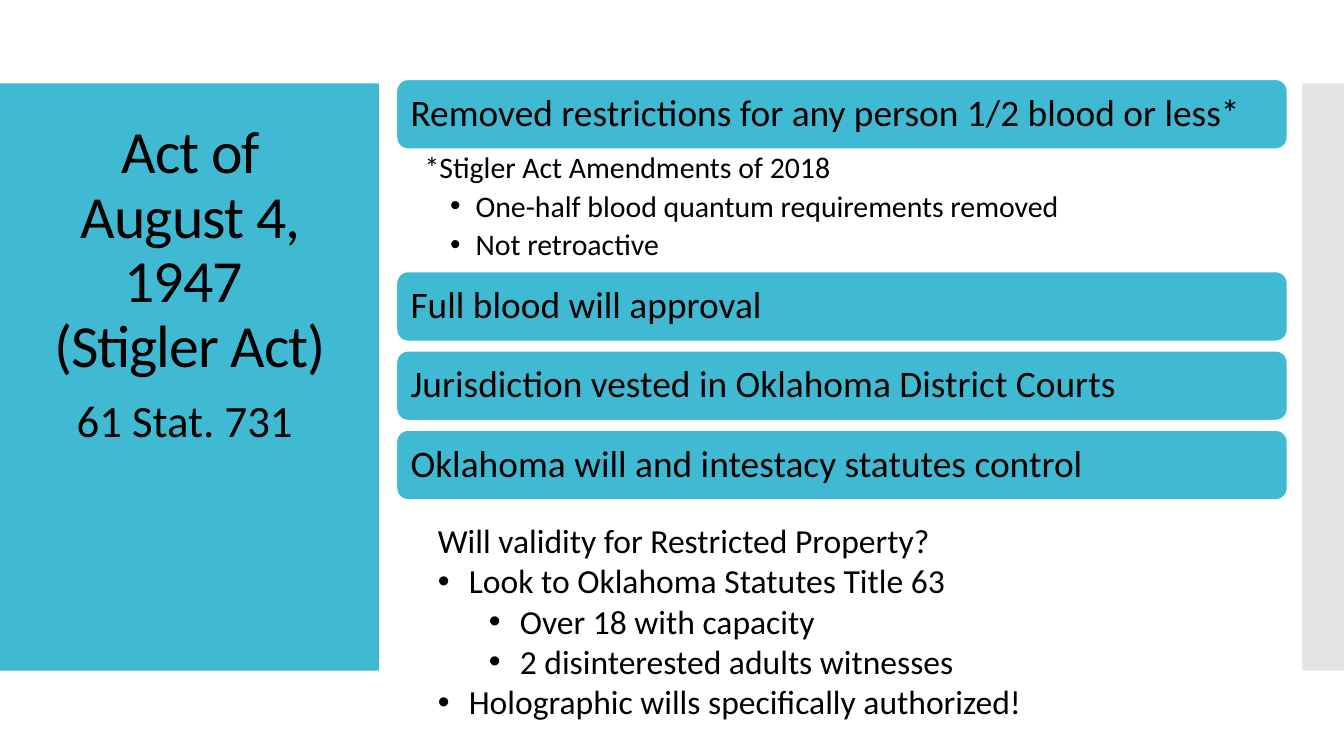
from dataclasses import dataclass

import pptx
import pptx.dml.color
import pptx.enum.shapes
import pptx.enum.text
import pptx.oxml.ns
import pptx.util
from lxml import etree

Inches = pptx.util.Inches
Pt = pptx.util.Pt
qn = pptx.oxml.ns.qn
Align = pptx.enum.text.PP_ALIGN
Anchor = pptx.enum.text.MSO_ANCHOR
Preset = pptx.enum.shapes.MSO_SHAPE


@dataclass(frozen=True)
class Theme:
    font: str = "Calibri"
    text: str = "000000"
    accent: str = "40BAD2"
    edge: str = "C8C8C8"
    outline: str = "FFFFFF"
    title: int = 32
    citation: int = 24
    bar: int = 20
    question: int = 18
    note: int = 16


@dataclass(frozen=True)
class Box:
    left: float
    top: float
    width: float
    height: float

    def lengths(self) -> tuple:
        return tuple(Inches(v) for v in (self.left, self.top, self.width, self.height))


@dataclass(frozen=True)
class Line:
    text: str
    level: int = 0
    indent: float = 0
    hanging: float = 0
    bullet: bool = False


THEME = Theme()
SLIDE_WIDTH = 10
SLIDE_HEIGHT = SLIDE_WIDTH * 9 / 16
BAR_LEFT, BAR_WIDTH, BAR_HEIGHT, BAR_PITCH = 2.95, 6.63, 0.52, 0.59
FIRST_BAR_TOP, LATER_BARS_TOP = 0.59, 2.02

MAIN_POINT = "Removed restrictions for any person 1/2 blood or less*"
LATER_POINTS = (
    "Full blood will approval",
    "Jurisdiction vested in Oklahoma District Courts",
    "Oklahoma will and intestacy statutes control",
)
AMENDMENTS = (
    Line("*Stigler Act Amendments of 2018", 1, 0.19, 0.19),
    Line("One-half blood quantum requirements removed", 2, 0.38, 0.19, True),
    Line("Not retroactive", 2, 0.38, 0.19, True),
)
WILL_VALIDITY = (
    Line("Will validity for Restricted Property?"),
    Line("Look to Oklahoma Statutes Title 63", 0, 0.23, 0.23, True),
    Line("Over 18 with capacity", 1, 0.61, 0.23, True),
    Line("2 disinterested adults witnesses", 1, 0.61, 0.23, True),
    Line("Holographic wills specifically authorized!", 0, 0.23, 0.23, True),
)


def rgb(colour: str) -> pptx.dml.color.RGBColor:
    return pptx.dml.color.RGBColor.from_string(colour)


def add_run(paragraph, text: str, size: int):
    run = paragraph.add_run()
    run.text = text
    run.font.name = THEME.font
    run.font.size = Pt(size)
    run.font.color.rgb = rgb(THEME.text)
    return run


def set_frame(frame, anchor, insets=(0.1, 0.05, 0.1, 0.05)) -> None:
    """Wrap and anchor the text; insets run left, top, right, bottom."""
    frame.word_wrap = True
    frame.auto_size = pptx.enum.text.MSO_AUTO_SIZE.NONE
    frame.vertical_anchor = anchor
    (frame.margin_left, frame.margin_top,
     frame.margin_right, frame.margin_bottom) = map(Inches, insets)


def set_indent(paragraph, line: Line) -> None:
    """Set level, hanging indent and bullet of a paragraph."""
    paragraph.level = line.level
    properties = paragraph._p.get_or_add_pPr()
    properties.set("marL", str(Inches(line.indent)))
    properties.set("indent", str(-Inches(line.hanging)))
    if line.bullet:
        etree.SubElement(properties, qn("a:buFont"), typeface="Arial")
        etree.SubElement(properties, qn("a:buChar"), char="•")
    else:
        etree.SubElement(properties, qn("a:buNone"))


def add_lines(slide, box: Box, lines: tuple[Line, ...], size: int, insets,
              spacing: float = 1, after: float = 0) -> None:
    frame = slide.shapes.add_textbox(*box.lengths()).text_frame
    set_frame(frame, Anchor.TOP, insets)
    for number, line in enumerate(lines):
        paragraph = frame.add_paragraph() if number else frame.paragraphs[0]
        paragraph.line_spacing = spacing
        paragraph.space_after = Pt(after)
        set_indent(paragraph, line)
        add_run(paragraph, line.text, size)


def add_filled(slide, preset, box: Box, fill: str):
    shape = slide.shapes.add_shape(preset, *box.lengths())
    shape.shadow.inherit = False
    shape.fill.solid()
    shape.fill.fore_color.rgb = rgb(fill)
    shape.line.fill.background()
    return shape


def add_panel(slide, box: Box, fill: str, opacity: int = 100) -> None:
    """Add a background panel behind the placeholders."""
    panel = add_filled(slide, Preset.RECTANGLE, box, fill)
    if opacity < 100:
        colour = panel.fill._xPr.find(".//" + qn("a:srgbClr"))
        etree.SubElement(colour, qn("a:alpha"), val=str(opacity * 1000))
    slide.shapes._spTree.insert(2, panel._element)


def add_bar(slide, top: float, text: str) -> None:
    box = Box(BAR_LEFT, top, BAR_WIDTH, BAR_HEIGHT)
    bar = add_filled(slide, Preset.ROUNDED_RECTANGLE, box, THEME.accent)
    bar.line.color.rgb = rgb(THEME.outline)
    bar.line.width = Pt(0.85)
    set_frame(bar.text_frame, Anchor.MIDDLE, (0.08, 0.08, 0.08, 0.08))
    paragraph = bar.text_frame.paragraphs[0]
    paragraph.alignment = Align.LEFT
    paragraph.line_spacing = 0.9
    add_run(paragraph, text, THEME.bar)


def place(placeholder, box: Box, anchor):
    """Move a placeholder and return its centred first paragraph."""
    (placeholder.left, placeholder.top,
     placeholder.width, placeholder.height) = box.lengths()
    set_frame(placeholder.text_frame, anchor)
    paragraph = placeholder.text_frame.paragraphs[0]
    paragraph.alignment = Align.CENTER
    return paragraph


def main() -> None:
    deck = pptx.Presentation()
    deck.slide_width, deck.slide_height = Inches(SLIDE_WIDTH), Inches(SLIDE_HEIGHT)
    slide = deck.slides.add_slide(deck.slide_layouts[1])

    add_panel(slide, Box(0, 0.62, 2.82, 4.37), THEME.accent)
    add_panel(slide, Box(9.69, 0.62, 0.31, 4.37), THEME.edge, opacity=50)

    heading = place(slide.shapes.title, Box(0.21, 0.71, 2.41, 2.17), Anchor.BOTTOM)
    heading.line_spacing = 0.9
    act = add_run(heading, "Act of August 4, 1947 ", THEME.title)
    heading.add_line_break()
    short_name = add_run(heading, "(Stigler Act)", THEME.title)
    for run in (act, short_name):
        run.font._element.set("spc", "-50")

    citation = place(slide.placeholders[1], Box(0.21, 2.87, 2.33, 1.9), Anchor.TOP)
    citation.space_before = Pt(9)
    set_indent(citation, Line("61 Stat. 731"))
    add_run(citation, "61 Stat. 731", THEME.citation)

    add_bar(slide, FIRST_BAR_TOP, MAIN_POINT)
    add_lines(slide, Box(BAR_LEFT, 1.11, BAR_WIDTH, 0.91), AMENDMENTS, THEME.note,
              (0.21, 0.03, 0.16, 0.03), spacing=0.9, after=3.2)
    for number, point in enumerate(LATER_POINTS):
        add_bar(slide, LATER_BARS_TOP + number * BAR_PITCH, point)
    add_lines(slide, Box(3.16, 3.82, 6, 1.62), WILL_VALIDITY, THEME.question,
              (0.1, 0.05, 0.1, 0.05))

    deck.save("out.pptx")


if __name__ == "__main__":
    main()
